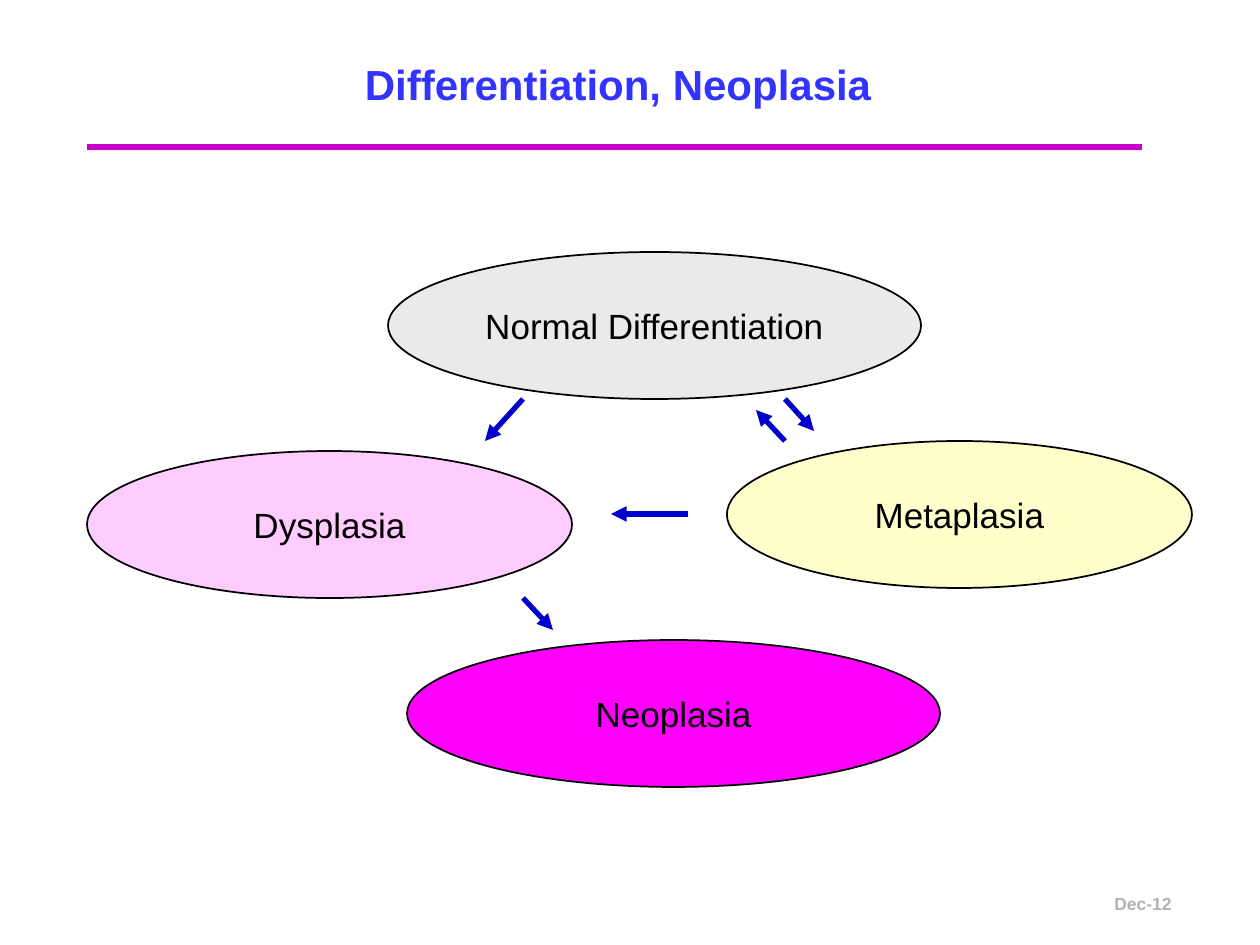
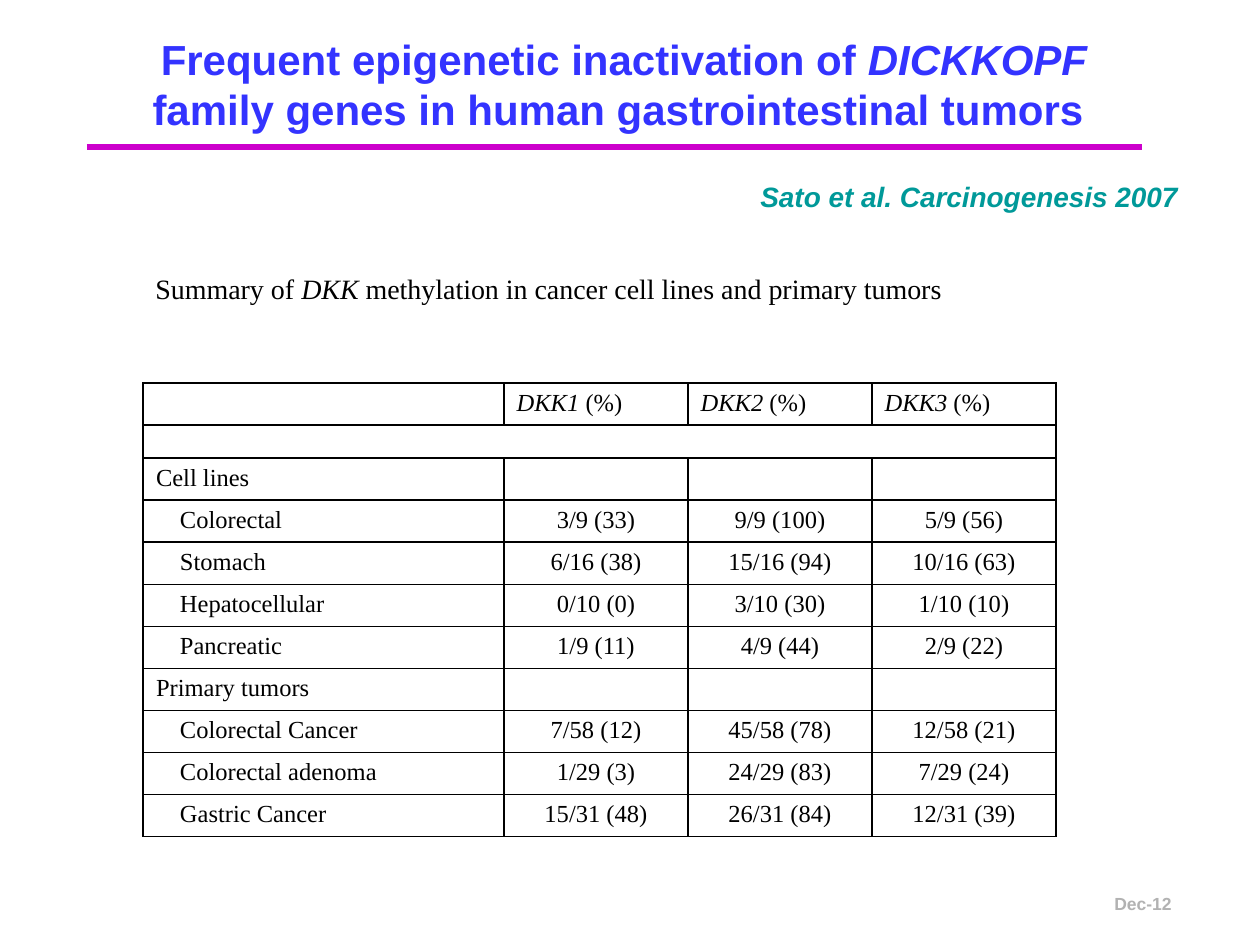
from lxml import etree
from pptx import Presentation
from pptx.dml.color import RGBColor
from pptx.enum.shapes import MSO_CONNECTOR, MSO_SHAPE
from pptx.enum.text import MSO_ANCHOR, PP_ALIGN
from pptx.oxml.ns import qn
from pptx.util import Emu, Pt

OVAL = MSO_SHAPE.OVAL
STRAIGHT = MSO_CONNECTOR.STRAIGHT
TOP, MIDDLE, BOTTOM = MSO_ANCHOR.TOP, MSO_ANCHOR.MIDDLE, MSO_ANCHOR.BOTTOM
LEFT, CENTER = PP_ALIGN.LEFT, PP_ALIGN.CENTER

SANS, SERIF = "Arial", "Times New Roman"
PX_PER_INCH = 126
COLORS = {
    "title": "3333FF",
    "rule": "CC00CC",
    "date": "B2B2B2",
    "citation": "009999",
    "ink": "000000",
    "arrow": "0000CC",
    "normal": "EAEAEA",
    "dysplasia": "FFCCFF",
    "metaplasia": "FFFFCC",
    "neoplasia": "FF00FF",
}


def px(length):
    return Emu(round(length * 914400 / PX_PER_INCH))


def rgb(name):
    return RGBColor.from_string(COLORS[name])


class Deck:
    def __init__(self):
        self.presentation = Presentation()
        self.presentation.slide_width = px(1260)
        self.presentation.slide_height = px(945)
        self.slide = None

    def new_slide(self, title_runs):
        blank = self.presentation.slide_layouts[6]
        self.slide = self.presentation.slides.add_slide(blank)
        self.line((87, 147), (1142, 147), "rule")
        self.text((1102, 872, 147, 63), [("Dec-12", False)], 10, "date", bold=True)
        self.text((107, 21, 1034, 126), title_runs, 24, "title", bold=True, align=CENTER)

    def add_runs(self, frame, runs, size, color="ink", font=SANS, bold=False, align=LEFT):
        paragraph = frame.paragraphs[0]
        paragraph.alignment = align
        for content, italic in runs:
            run = paragraph.add_run()
            run.text = content
            run.font.name = font
            run.font.size = Pt(size)
            run.font.bold = bold
            run.font.italic = italic
            run.font.color.rgb = rgb(color)

    def text(self, box, runs, size, color="ink", anchor=MIDDLE, **style):
        frame = self.slide.shapes.add_textbox(*map(px, box)).text_frame
        frame.word_wrap = True
        frame.vertical_anchor = anchor
        self.add_runs(frame, runs, size, color, **style)

    def ellipse(self, box, label, fill):
        oval = self.slide.shapes.add_shape(OVAL, *map(px, box))
        oval.shadow.inherit = False
        oval.fill.solid()
        oval.fill.fore_color.rgb = rgb(fill)
        oval.line.color.rgb = rgb("ink")
        oval.line.width = Pt(1)
        oval.text_frame.word_wrap = False
        oval.text_frame.vertical_anchor = MIDDLE
        self.add_runs(oval.text_frame, [(label, False)], 20, align=CENTER)

    def line(self, start, end, color, arrow=False):
        connector = self.slide.shapes.add_connector(STRAIGHT, *map(px, start + end))
        connector.line.color.rgb = rgb(color)
        connector.line.width = Pt(3)
        properties = connector._element.spPr
        if arrow:
            etree.SubElement(properties.find(qn("a:ln")), qn("a:tailEnd"), type="triangle")
        etree.SubElement(properties, qn("a:effectLst"))

    def border(self, cell):
        properties = cell._tc.get_or_add_tcPr()
        for index, side in enumerate(("a:lnL", "a:lnR", "a:lnT", "a:lnB")):
            edge = etree.Element(qn(side), w=str(Pt(1)))
            fill = etree.SubElement(edge, qn("a:solidFill"))
            etree.SubElement(fill, qn("a:srgbClr"), val=COLORS["ink"])
            properties.insert(index, edge)

    def table(self, corner, widths, heights, rows):
        box = (*corner, sum(widths), sum(heights))
        table = self.slide.shapes.add_table(len(rows), len(widths), *map(px, box)).table
        table.first_row = table.horz_banding = False
        for column, width in zip(table.columns, widths):
            column.width = px(width)
        for row, height in zip(table.rows, heights):
            row.height = px(height)
        for row_index, (values, indent, align) in enumerate(rows):
            for column_index in range(len(widths)):
                cell = table.cell(row_index, column_index)
                cell.fill.background()
                self.border(cell)
                if column_index < len(values):
                    self.add_runs(cell.text_frame, values[column_index], 14, font=SERIF,
                                  align=align if column_index else LEFT)
                    if column_index == 0:
                        cell.margin_left = px(13 + indent)
                size = 1400 if values else 800
                etree.SubElement(cell.text_frame.paragraphs[0]._p, qn("a:endParaRPr"),
                                 sz=str(size))
            if not values:
                table.cell(row_index, 0).merge(table.cell(row_index, len(widths) - 1))


def differentiation_slide(deck):
    deck.new_slide([("Differentiation, Neoplasia ", False)])
    stages = [
        ((388, 252, 533, 147), "Normal Differentiation", "normal"),
        ((87, 451, 485, 147), "Dysplasia", "dysplasia"),
        ((727, 441, 465, 147), "Metaplasia", "metaplasia"),
        ((407, 640, 533, 147), "Neoplasia", "neoplasia"),
    ]
    for stage in stages:
        deck.ellipse(*stage)
    transitions = [
        ((523, 399), (485, 441)),
        ((785, 399), (814, 431)),
        ((785, 441), (756, 410)),
        ((688, 514), (611, 514)),
        ((523, 598), (553, 630)),
    ]
    for start, end in transitions:
        deck.line(start, end, "arrow", arrow=True)


def methylation_slide(deck):
    deck.new_slide([
        ("Frequent epigenetic inactivation of ", False),
        ("DICKKOPF", True),
        (" family genes in human gastrointestinal tumors ", False),
    ])
    deck.text((748, 165, 469, 54), [("Sato et al. Carcinogenesis 2007", True)], 16,
              "citation", anchor=BOTTOM, bold=True)
    deck.text((143, 265, 823, 81), [
        ("Summary of ", False),
        ("DKK", True),
        (" methylation in cancer cell lines and primary tumors", False),
    ], 16, anchor=TOP, font=SERIF)

    genes = [[(gene, True), (" (%)", False)] for gene in ("DKK1", "DKK2", "DKK3")]
    groups = {
        "Cell lines": [
            ("Colorectal", "3/9 (33)", "9/9 (100)", "5/9 (56)"),
            ("Stomach", "6/16 (38)", "15/16 (94)", "10/16 (63)"),
            ("Hepatocellular", "0/10 (0)", "3/10 (30)", "1/10 (10)"),
            ("Pancreatic", "1/9 (11)", "4/9 (44)", "2/9 (22)"),
        ],
        "Primary tumors": [
            ("Colorectal Cancer", "7/58 (12)", "45/58 (78)", "12/58 (21)"),
            ("Colorectal adenoma", "1/29 (3)", "24/29 (83)", "7/29 (24)"),
            ("Gastric Cancer", "15/31 (48)", "26/31 (84)", "12/31 (39)"),
        ],
    }
    rows = [([[], *genes], 0, LEFT), ([], 0, LEFT)]
    for group, tissues in groups.items():
        rows.append(([[(group, False)]], 0, LEFT))
        for tissue in tissues:
            rows.append(([[(value, False)] for value in tissue], 24, CENTER))
    heights = [42 if values else 33 for values, _, _ in rows]
    deck.table((143, 383), [361, 184, 184, 184], heights, rows)


def main():
    deck = Deck()
    differentiation_slide(deck)
    methylation_slide(deck)
    deck.presentation.save("out.pptx")


if __name__ == "__main__":
    main()
